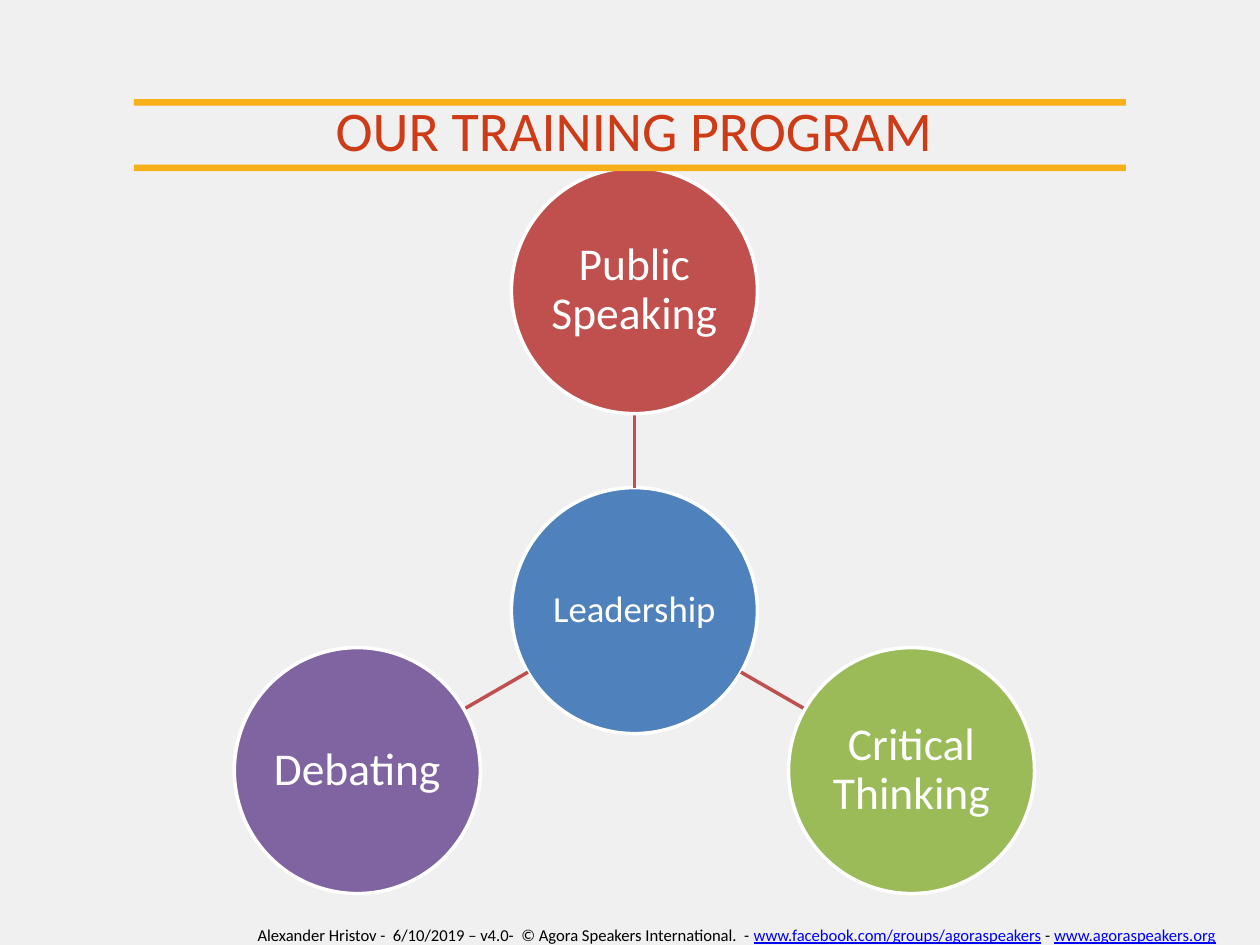
from math import cos, radians, sin

from lxml.etree import SubElement
from pptx import Presentation
from pptx.dml.color import RGBColor
from pptx.enum.shapes import MSO_CONNECTOR as Connector, MSO_SHAPE as Shape
from pptx.enum.text import MSO_ANCHOR as Anchor, PP_ALIGN as Align
from pptx.oxml.ns import qn
from pptx.util import Cm, Pt

FONT = "Calibri"
WHITE, RULE, SPOKE = "FFFFFF", "F8AF18", "C0504D"
BLACK, LINK = "000000", "0000FF"


def color(value):
    return RGBColor.from_string(value)


def style(paragraph, size, text_color=None):
    paragraph.alignment = Align.CENTER
    paragraph.font.name = FONT
    paragraph.font.size = Pt(size)
    if text_color:
        paragraph.font.color.rgb = color(text_color)


def add_header(slide, left, top, width, title):
    for offset in (0.2, 1.52):
        rule = slide.shapes.add_shape(
            Shape.RECTANGLE, Cm(left + 2.53), Cm(top + offset), Cm(width - 5.23), Cm(0.13))
        rule.shadow.inherit = False
        rule.fill.solid()
        rule.fill.fore_color.rgb = color(RULE)
        rule.line.fill.background()
    heading = slide.shapes.add_textbox(Cm(left), Cm(top), Cm(width), Cm(1.52))
    heading.text_frame.word_wrap = True
    heading.text_frame.text = title
    style(heading.text_frame.paragraphs[0], 32, "CE3C17")


def add_footer(slide, left, top, width, height, parts):
    footer = slide.shapes.add_textbox(Cm(left), Cm(top), Cm(width), Cm(height))
    footer.text_frame.word_wrap = True
    credit = footer.text_frame.paragraphs[0]
    style(credit, 9.5)
    for text, is_address in parts:
        part = credit.add_run()
        part.text = text
        part.font.underline = is_address
        part.font.color.rgb = color(LINK if is_address else BLACK)


def add_circle(slide, x, y, radius, label, fill, size):
    circle = slide.shapes.add_shape(
        Shape.OVAL, Cm(x - radius), Cm(y - radius), Cm(2 * radius), Cm(2 * radius))
    circle.shadow.inherit = False
    circle.fill.solid()
    circle.fill.fore_color.rgb = color(fill)
    circle.line.color.rgb = color(WHITE)
    circle.line.width = Pt(2)
    frame = circle.text_frame
    frame.word_wrap = True
    frame.vertical_anchor = Anchor.MIDDLE
    frame.margin_left = frame.margin_right = Cm(0.05)
    frame.margin_top = frame.margin_bottom = Cm(0.05)
    frame.text = label
    style(frame.paragraphs[0], size, WHITE)
    frame.paragraphs[0].line_spacing = 0.9


def add_spoke(slide, start, end):
    spoke = slide.shapes.add_connector(
        Connector.STRAIGHT, *(Cm(value) for value in (*start, *end)))
    spoke.line.color.rgb = color(SPOKE)
    spoke.line.width = Pt(2)
    SubElement(spoke._element.spPr, qn("a:effectLst"))


def add_radial(slide, left, top, width, hub, topics):
    radius, orbit = 2.48, 6.45
    center_x, center_y = left + width / 2, top + radius + orbit

    def point(angle, distance):
        turn = radians(angle)
        return center_x + distance * sin(turn), center_y - distance * cos(turn)

    add_circle(slide, center_x, center_y, radius, *hub, 21)
    for index, topic in enumerate(topics):
        angle = index * 360 / len(topics)
        add_spoke(slide, point(angle, radius), point(angle, orbit - radius))
        add_circle(slide, *point(angle, orbit), radius, *topic, 26)


def main():
    deck = Presentation()
    deck.slide_width, deck.slide_height = Cm(25.4), Cm(19.05)
    slide = deck.slides.add_slide(deck.slide_layouts[6])
    slide.background.fill.solid()
    slide.background.fill.fore_color.rgb = color("F0F0F0")

    add_footer(slide, 4.3, 18.52, 21.1, 0.53, [
        ("Alexander Hristov -  6/10/2019 – v4.0-  © Agora Speakers International.  - ", False),
        ("www.facebook.com/groups/agoraspeakers", True),
        (" - ", False),
        ("www.agoraspeakers.org", True),
    ])
    add_radial(slide, 4.73, 3.38, 16.12, ("Leadership", "4F81BD"), [
        ("Public Speaking", "C0504D"),
        ("Critical Thinking", "9BBB59"),
        ("Debating", "8064A2"),
    ])
    add_header(slide, 0.17, 1.8, 25.23, "OUR TRAINING PROGRAM")
    deck.save("out.pptx")


if __name__ == "__main__":
    main()
